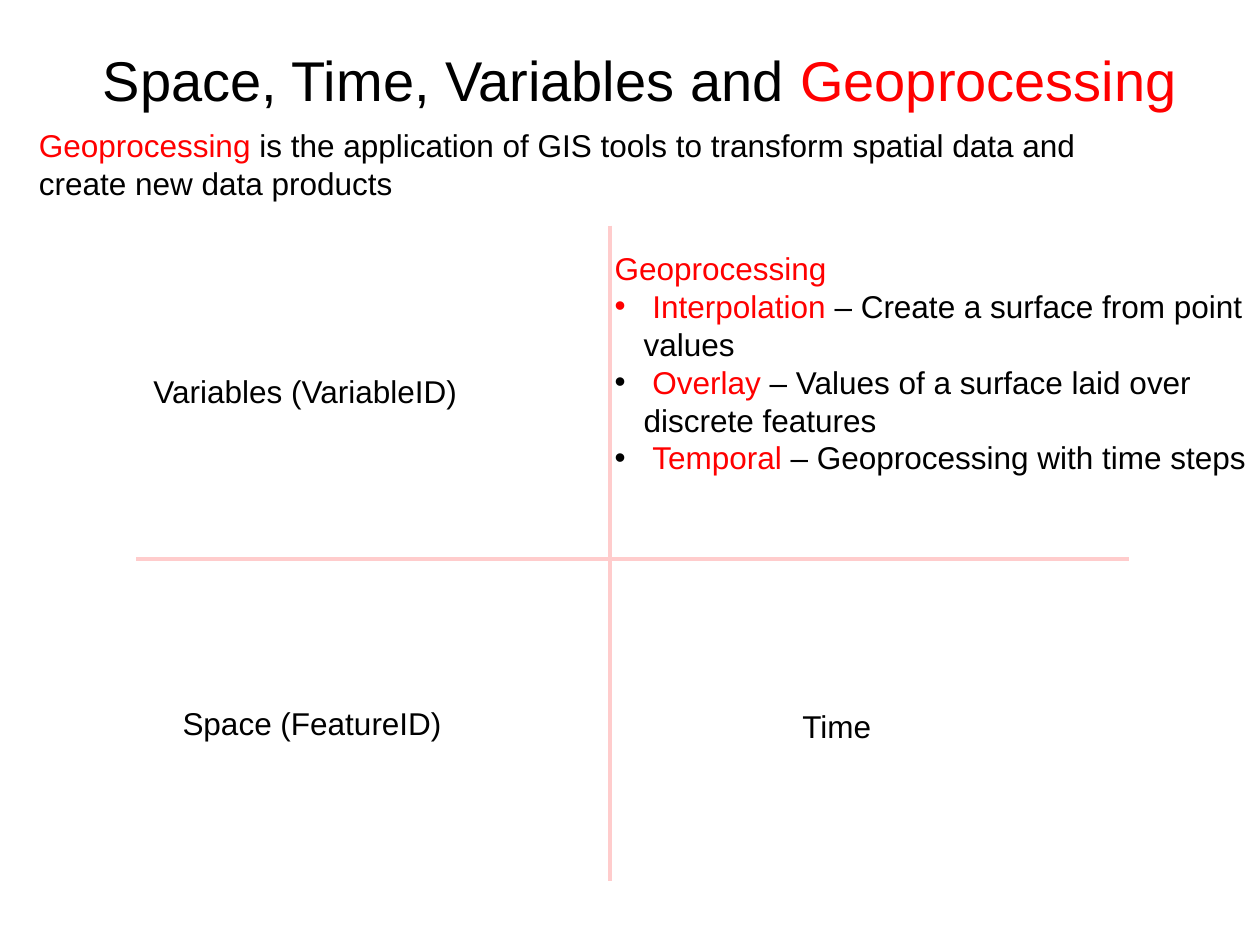
"""Build a slide that places geoprocessing in the space, time and variables quadrants."""
from lxml import etree
from pptx import Presentation
from pptx.dml.color import RGBColor
from pptx.enum.shapes import MSO_CONNECTOR
from pptx.enum.text import MSO_ANCHOR, MSO_AUTO_SIZE, PP_ALIGN
from pptx.oxml.ns import qn
from pptx.util import Inches, Pt

STRAIGHT = MSO_CONNECTOR.STRAIGHT
MIDDLE = MSO_ANCHOR.MIDDLE
FIT_SHAPE, FIT_NONE = MSO_AUTO_SIZE.SHAPE_TO_FIT_TEXT, MSO_AUTO_SIZE.NONE
LEFT, CENTER = PP_ALIGN.LEFT, PP_ALIGN.CENTER
TITLE_ONLY = 5
BLACK, RED, PINK = "000000", "FF0000", "FFCCCC"


def color(hex_code):
    return RGBColor.from_string(hex_code)


class QuadrantSlide:
    font, title_size, body_size = "Arial", 32, 18
    axis_width, bullet_indent = 2.25, 0.23

    def __init__(self, slide):
        self.slide = slide

    def fill_paragraph(self, paragraph, runs, size, align=LEFT):
        paragraph.alignment = align
        paragraph.font.name = self.font
        paragraph.font.size = Pt(size)
        for text, hex_code in runs:
            run = paragraph.add_run()
            run.text = text
            run.font.color.rgb = color(hex_code)

    def bullet(self, paragraph):
        indent = Inches(self.bullet_indent)
        properties = paragraph._p.get_or_add_pPr()
        properties.set("marL", str(indent))
        properties.set("indent", str(-indent))
        default_font = properties.find(qn("a:defRPr"))
        for tag, attributes in (("a:buFont", {"typeface": self.font}),
                                ("a:buChar", {"char": "•"})):
            default_font.addprevious(etree.Element(qn(tag), attributes))

    def title(self, box, runs):
        title = self.slide.shapes.title
        title.left, title.top, title.width, title.height = map(Inches, box)
        frame = title.text_frame
        frame.auto_size = FIT_NONE
        frame.vertical_anchor = MIDDLE
        self.fill_paragraph(frame.paragraphs[0], runs, self.title_size, CENTER)

    def axes(self, lines):
        group = self.slide.shapes.add_group_shape()
        for ends in lines:
            axis = group.shapes.add_connector(STRAIGHT, *map(Inches, ends))
            axis.line.color.rgb = color(PINK)
            axis.line.width = Pt(self.axis_width)
            etree.SubElement(axis._element.spPr, qn("a:effectLst"))

    def text(self, box, heading, bullets=(), wrap=True):
        frame = self.slide.shapes.add_textbox(*map(Inches, box)).text_frame
        frame.word_wrap = wrap
        frame.auto_size = FIT_SHAPE
        self.fill_paragraph(frame.paragraphs[0], heading, self.body_size)
        for runs in bullets:
            paragraph = frame.add_paragraph()
            self.fill_paragraph(paragraph, runs, self.body_size)
            self.bullet(paragraph)


def main():
    presentation = Presentation()
    presentation.slide_width, presentation.slide_height = Inches(10), Inches(7.5)
    layout = presentation.slide_layouts[TITLE_ONLY]
    page = QuadrantSlide(presentation.slides.add_slide(layout))

    page.title((0.58, 0, 9, 1.25),
               [("Space, Time, Variables and ", BLACK), ("Geoprocessing", RED)])
    page.axes([(4.84, 1.79, 4.84, 6.99), (1.08, 4.44, 8.96, 4.44)])

    quadrants = [
        ("Variables (VariableID)", (1.12, 2.9, 2.63, 0.4)),
        ("Space (FeatureID)", (1.35, 5.54, 2.28, 0.4)),
        ("Time", (6.27, 5.56, 0.75, 0.4)),
    ]
    for label, box in quadrants:
        page.text(box, [(label, BLACK)], wrap=False)

    methods = [
        [(" Interpolation ", RED), ("– Create a surface from point values", BLACK)],
        [(" ", BLACK), ("Overlay", RED),
         (" – Values of a surface laid over discrete features", BLACK)],
        [(" ", BLACK), ("Temporal ", RED), ("– Geoprocessing with time steps", BLACK)],
    ]
    page.text((4.78, 1.93, 5.22, 1.92), [("Geoprocessing", RED)], methods)
    page.text((0.21, 0.95, 8.88, 0.71),
              [("Geoprocessing ", RED),
               ("is the application of GIS tools to transform spatial data "
                "and create new data products", BLACK)])

    presentation.save("out.pptx")


if __name__ == "__main__":
    main()
